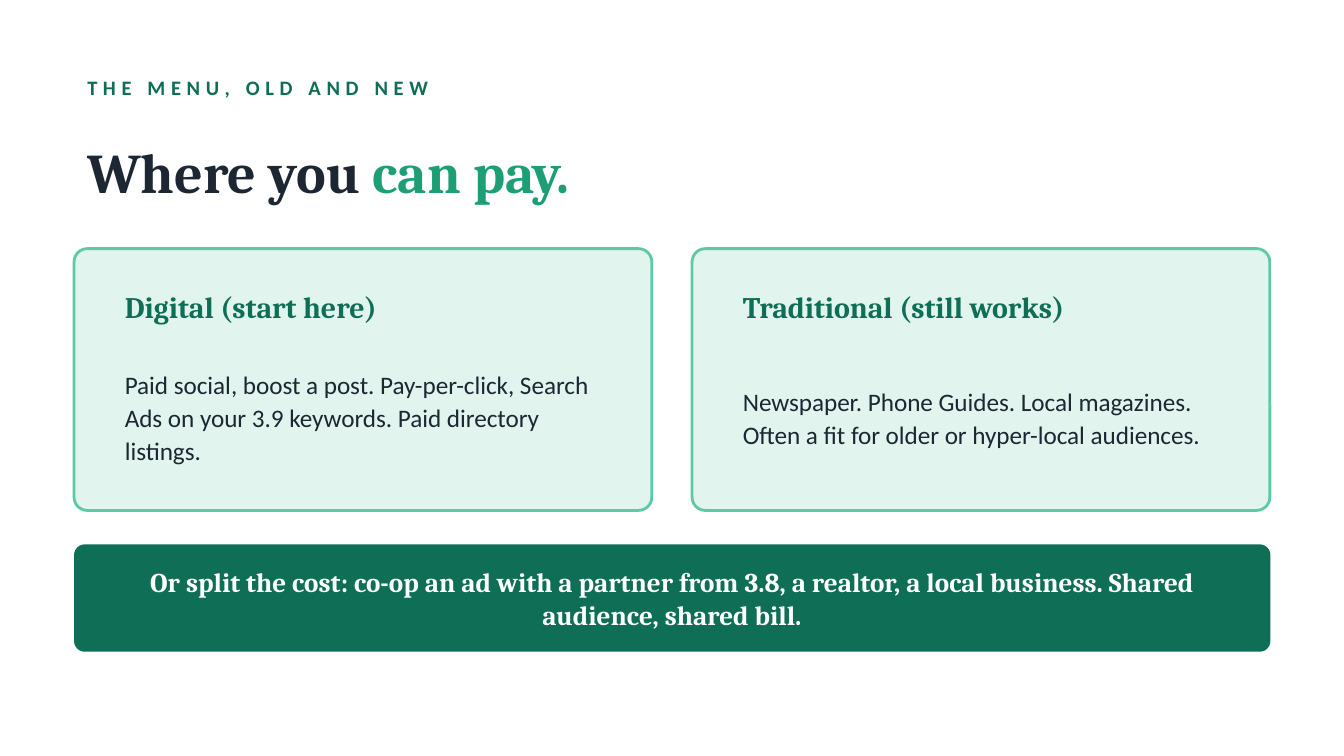
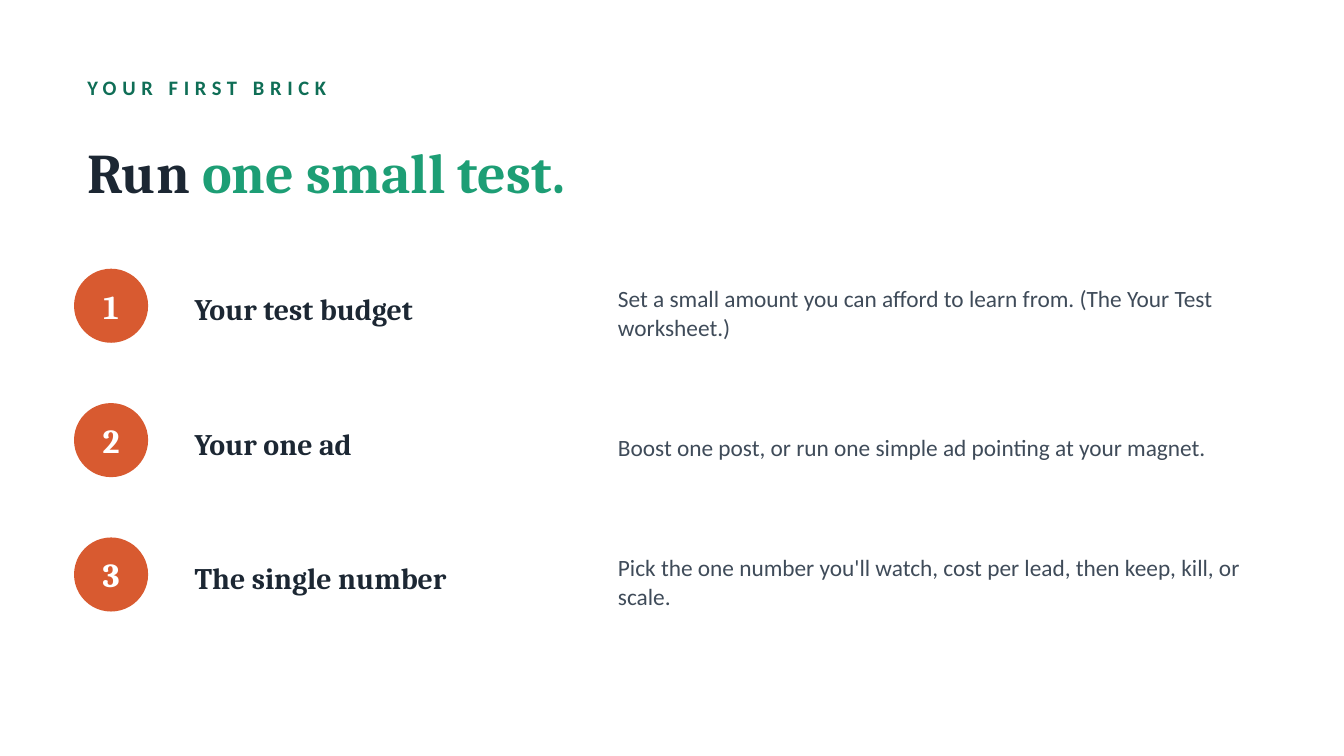
from pptx import Presentation
from pptx.dml.color import RGBColor
from pptx.enum.shapes import MSO_SHAPE
from pptx.enum.text import MSO_ANCHOR, PP_ALIGN
from pptx.util import Cm, Pt

ROUNDED = MSO_SHAPE.ROUNDED_RECTANGLE
CIRCLE = MSO_SHAPE.OVAL
MIDDLE = MSO_ANCHOR.MIDDLE
LEFT, CENTER = PP_ALIGN.LEFT, PP_ALIGN.CENTER

SERIF, SANS = "Cambria", "Calibri"
INK, SLATE, WHITE = "1C2733", "3F4B59", "FFFFFF"
DEEP_GREEN, GREEN, SOFT_GREEN, MINT = "0F6E56", "1D9E75", "5DCAA5", "E1F5EE"
ORANGE = "D85A30"

# Lengths in centimetres
MARGIN, CONTENT_WIDTH = 1.4, 22.61


def add_text(slide, box, runs, size, font, bold=False, align=LEFT,
             line_spacing=None, tracking=None):
    """Add a middle-anchored paragraph; runs are (text, colour) pairs."""
    frame = slide.shapes.add_textbox(*[Cm(length) for length in box]).text_frame
    frame.word_wrap = True
    frame.vertical_anchor = MIDDLE
    paragraph = frame.paragraphs[0]
    paragraph.alignment = align
    if line_spacing:
        paragraph.line_spacing = line_spacing
    for text, colour in runs:
        run = paragraph.add_run()
        run.text = text
        run.font.size = Pt(size)
        run.font.name = font
        run.font.bold = bold
        run.font.color.rgb = RGBColor.from_string(colour)
        if tracking:
            run.font._element.set("spc", str(tracking * 100))


def add_panel(slide, kind, box, fill, outline=None, corner=None):
    """Add a filled shape, outlined at 1.5 pt when outline is given."""
    panel = slide.shapes.add_shape(kind, *[Cm(length) for length in box])
    panel.shadow.inherit = False
    panel.fill.solid()
    panel.fill.fore_color.rgb = RGBColor.from_string(fill)
    if outline:
        panel.line.color.rgb = RGBColor.from_string(outline)
        panel.line.width = Pt(1.5)
    else:
        panel.line.fill.background()
    if corner:
        panel.adjustments[0] = corner


deck = Presentation()
deck.slide_width, deck.slide_height = Cm(25.4), Cm(14.29)

# Kicker and two-tone title on each slide
headings = [
    ("THE MENU, OLD AND NEW", "Where you ", "can pay."),
    ("YOUR FIRST BRICK", "Run ", "one small test."),
]
for kicker, title_start, title_accent in headings:
    slide = deck.slides.add_slide(deck.slide_layouts[6])
    add_text(slide, (MARGIN, 1.27, CONTENT_WIDTH, 0.76),
             [(kicker, DEEP_GREEN)], 11, SANS, bold=True, tracking=3)
    add_text(slide, (MARGIN, 2.16, CONTENT_WIDTH, 2.16),
             [(title_start, INK), (title_accent, GREEN)], 30, SERIF, bold=True)
menu_slide, test_slide = deck.slides

# Slide 1: two channel cards
CARD_WIDTH, CARD_PITCH, CARD_PADDING, CARD_TEXT_WIDTH = 10.92, 11.68, 0.71, 9.65
channels = [
    ("Digital (start here)",
     "Paid social, boost a post. Pay-per-click, Search Ads on your 3.9 "
     "keywords. Paid directory listings."),
    ("Traditional (still works)",
     "Newspaper. Phone Guides. Local magazines. Often a fit for older or "
     "hyper-local audiences."),
]
for column, (channel, examples) in enumerate(channels):
    card_left = MARGIN + column * CARD_PITCH
    text_left = card_left + CARD_PADDING
    add_panel(menu_slide, ROUNDED, (card_left, 4.7, CARD_WIDTH, 4.95),
              MINT, outline=SOFT_GREEN, corner=0.051)
    add_text(menu_slide, (text_left, 5.16, CARD_TEXT_WIDTH, 1.27),
             [(channel, DEEP_GREEN)], 16, SERIF, bold=True)
    add_text(menu_slide, (text_left, 6.53, CARD_TEXT_WIDTH, 2.67),
             [(examples, INK)], 13.5, SANS, line_spacing=1.1)

# Slide 1: cost-sharing banner
add_panel(menu_slide, ROUNDED, (MARGIN, 10.29, CONTENT_WIDTH, 2.03),
          DEEP_GREEN, corner=0.1)
add_text(menu_slide, (2.03, 10.29, 21.34, 2.03),
         [("Or split the cost: co-op an ad with a partner from 3.8, a realtor, "
           "a local business. Shared audience, shared bill.", WHITE)],
         14.5, SERIF, bold=True, align=CENTER)

# Slide 2: numbered steps
FIRST_STEP_TOP, STEP_PITCH, BADGE_SIZE = 5.08, 2.54, 1.4
steps = [
    ("Your test budget",
     "Set a small amount you can afford to learn from. (The Your Test worksheet.)"),
    ("Your one ad",
     "Boost one post, or run one simple ad pointing at your magnet."),
    ("The single number",
     "Pick the one number you'll watch, cost per lead, then keep, kill, or scale."),
]
for index, (step, instruction) in enumerate(steps):
    badge_top = FIRST_STEP_TOP + index * STEP_PITCH
    label_top = badge_top - 0.13
    badge_box = (MARGIN, badge_top, BADGE_SIZE, BADGE_SIZE)
    add_panel(test_slide, CIRCLE, badge_box, ORANGE)
    add_text(test_slide, badge_box, [(str(index + 1), WHITE)], 18, SERIF,
             bold=True, align=CENTER)
    add_text(test_slide, (3.43, label_top, 7.62, 1.78), [(step, INK)], 16, SERIF,
             bold=True)
    add_text(test_slide, (11.43, label_top, 12.7, 1.9), [(instruction, SLATE)],
             12.5, SANS, line_spacing=1.05)

deck.save("out.pptx")
